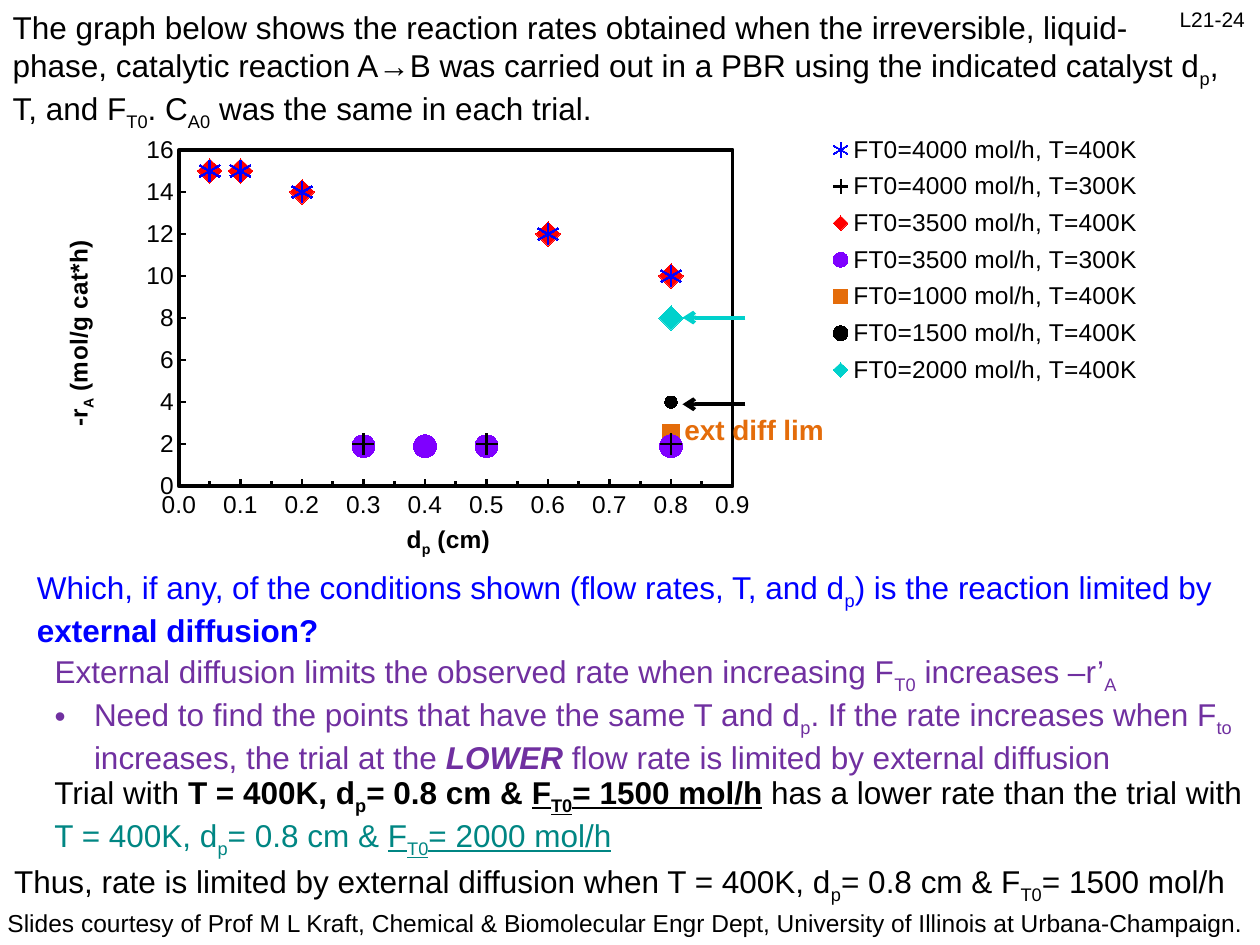
from lxml.etree import SubElement as Sub
from pptx import Presentation
from pptx.chart.data import XyChartData
from pptx.dml.color import RGBColor
from pptx.enum.chart import XL_CHART_TYPE as Kind, XL_LEGEND_POSITION as Side
from pptx.enum.chart import XL_MARKER_STYLE as Mark, XL_TICK_MARK as Tick
from pptx.enum.shapes import MSO_CONNECTOR as Link
from pptx.enum.text import MSO_ANCHOR as Anchor, MSO_AUTO_SIZE as Auto, PP_ALIGN as Align
from pptx.oxml.ns import qn
from pptx.util import Pt

FONT = "Arial"
BLACK = RGBColor(0x00, 0x00, 0x00)
BLUE = RGBColor(0x00, 0x00, 0xFF)
RED = RGBColor(0xFF, 0x00, 0x00)
VIOLET = RGBColor(0x7F, 0x00, 0xFF)
PURPLE = RGBColor(0x70, 0x30, 0xA0)
ORANGE = RGBColor(0xE4, 0x6C, 0x0A)
CYAN = RGBColor(0x00, 0xD1, 0xCC)
TEAL = RGBColor(0x00, 0x86, 0x83)

SIZES, HOT = (0.05, 0.1, 0.2, 0.6, 0.8), (15, 15, 14, 12, 10)
TRIALS = [
    (4000, 400, SIZES, HOT, Mark.STAR, 12, BLUE),
    (4000, 300, (0.3, 0.5, 0.8), (2, 2, 2), Mark.PLUS, 12, BLACK),
    (3500, 400, SIZES, HOT, Mark.DIAMOND, 14, RED),
    (3500, 300, (0.3, 0.4, 0.5, 0.8), (1.9,) * 4, Mark.CIRCLE, 13, VIOLET),
    (1000, 400, (0.8,), (2.5,), Mark.SQUARE, 10, ORANGE),
    (1500, 400, (0.8,), (4,), Mark.CIRCLE, 7, BLACK),
    (2000, 400, (0.8,), (8,), Mark.DIAMOND, 14, CYAN),
]


def write(frame, *lines, size=18, color=BLACK, bold=False, align=Align.LEFT, dots=()):
    """Fill a frame with lines of (text, flags[, color]) runs; flags are b, i, u and s for subscript."""
    for n, line in enumerate(lines):
        para = frame.add_paragraph() if n else frame.paragraphs[0]
        para.alignment, para.space_before = align, Pt(0)
        props = para._p.get_or_add_pPr()
        hang = Pt(22.5) if n in dots else 0
        props.set("marL", str(hang))
        props.set("indent", str(-hang))
        if hang:
            Sub(props, qn("a:buChar"), char="•")
        else:
            Sub(props, qn("a:buNone"))
        for text, flags, *tint in line:
            run = para.add_run()
            run.text = text
            font = run.font
            font.name, font.size = FONT, Pt(size)
            font.bold, font.italic = bold or "b" in flags, "i" in flags
            font.underline = "u" in flags
            font.color.rgb = tint[0] if tint else color
            if "s" in flags:
                run._r.get_or_add_rPr().set("baseline", "-25000")


def fit(shape, box):
    """Move a placeholder into a box and top-align its text."""
    shape.left, shape.top, shape.width, shape.height = map(Pt, box)
    frame = shape.text_frame
    frame.auto_size, frame.vertical_anchor, frame.word_wrap = Auto.NONE, Anchor.TOP, True
    return frame


def label(slide, box, *lines, wrap=True, pad=7.2, **style):
    """Add a text box."""
    frame = slide.shapes.add_textbox(*map(Pt, box)).text_frame
    frame.word_wrap = wrap
    frame.margin_left = frame.margin_right = Pt(pad)
    write(frame, *lines, **style)


def arrow(slide, x, y, color):
    """Draw a short arrow that points left from x, y."""
    line = slide.shapes.add_connector(Link.STRAIGHT, Pt(x), Pt(y), Pt(x - 36), Pt(y))
    line.line.color.rgb, line.line.width = color, Pt(2.25)
    props = line.element.find(qn("p:spPr"))
    Sub(props.find(qn("a:ln")), qn("a:tailEnd"), type="arrow")
    Sub(props, qn("a:effectLst"))


def place(node, inner=False, **spots):
    """Give a chart part a manual layout in fractions of the chart."""
    layout = node.find(qn("c:layout"))
    if layout is None:
        layout = Sub(node, qn("c:layout"))
        node.insert(1, layout)
    manual = Sub(layout, qn("c:manualLayout"))
    if inner:
        Sub(manual, qn("c:layoutTarget"), val="inner")
    for mode in ("xMode", "yMode"):
        Sub(manual, qn("c:" + mode), val="edge")
    for key, val in spots.items():
        Sub(manual, qn("c:" + key), val=str(val))


def scale(axis, top, step, form, *title):
    """Format one axis and its title."""
    axis.minimum_scale, axis.maximum_scale, axis.major_unit = 0, top, step
    axis.has_major_gridlines = False
    axis.major_tick_mark = Tick.INSIDE
    axis.tick_labels.number_format, axis.tick_labels.number_format_is_linked = form, False
    axis.format.line.color.rgb, axis.format.line.width = BLACK, Pt(1.5)
    write(axis.axis_title.text_frame, title, size=14, bold=True, align=Align.CENTER)


def frame_plot(area):
    """Outline the plot area."""
    props = Sub(area, qn("c:spPr"))
    Sub(props, qn("a:noFill"))
    edge = Sub(props, qn("a:ln"), w=str(Pt(2.25)))
    Sub(Sub(edge, qn("a:solidFill")), qn("a:srgbClr"), val=str(BLACK))


def graph(slide, box):
    """Add the rate chart with its arrows and tag."""
    data = XyChartData()
    for flow, temp, xs, ys, *_ in TRIALS:
        series = data.add_series(f"FT0={flow} mol/h, T={temp}K")
        for x, y in zip(xs, ys):
            series.add_data_point(x, y)
    chart = slide.shapes.add_chart(Kind.XY_SCATTER, *map(Pt, box), data).chart
    chart.has_title = False
    chart.font.name, chart.font.size, chart.font.color.rgb = FONT, Pt(14), BLACK
    chart.plots[0].vary_by_categories = False
    for series, (*_, style, size, color) in zip(chart.plots[0].series, TRIALS):
        series.smooth = False
        series.format.line.fill.background()
        mark = series.marker
        mark.style, mark.size = style, size
        mark.format.fill.solid()
        mark.format.fill.fore_color.rgb = mark.format.line.color.rgb = color
    across, up = chart.category_axis, chart.value_axis
    scale(across, 0.9, 0.1, "#,##0.0", ("d", ""), ("p", "s"), (" (cm)", ""))
    across.minor_unit, across.minor_tick_mark = 0.05, Tick.INSIDE
    scale(up, 16, 2, "General", ("-r", ""), ("A", "s"), (" (mol/g cat*h)", ""))
    chart.has_legend = True
    chart.legend.position, chart.legend.include_in_layout = Side.RIGHT, False
    root = chart.element
    area = root.find(".//" + qn("c:plotArea"))
    place(area, inner=True, x=0.113, y=0.063, w=0.475, h=0.77)
    frame_plot(area)
    place(root.find(".//" + qn("c:legend")), x=0.645, y=0.01, w=0.32, h=0.61)
    base, side = root.iter(qn("c:title"))
    place(base, x=0.305, y=0.91)
    place(side, x=0.01, y=0.265)
    turn = side.find(".//" + qn("a:bodyPr"))
    turn.set("rot", "-5400000")
    turn.set("vert", "horz")
    left, top = box[:2]
    arrow(slide, left + 399, top + 161, BLACK)
    arrow(slide, left + 399, top + 111.5, CYAN)
    label(slide, (left + 357, top + 162, 97, 27), [("ext diff lim", "")],
          wrap=False, size=16, color=ORANGE, bold=True)


def head(slide, box):
    """Write the problem in the title and the page label beside it."""
    left, top, width, _ = box
    write(fit(slide.shapes.title, box),
          [("The graph below shows the reaction rates obtained when the irreversible, liquid-", "")],
          [("phase, catalytic reaction A→B was carried out in a PBR using the indicated catalyst d", ""),
           ("p", "s"), (", T, and F", ""), ("T0", "s"), (". C", ""), ("A0", "s"),
           (" was the same in each trial.", "")])
    label(slide, (left + width - 53, top - 1, 53, 21), [("L21-24", "")], wrap=False, size=12)


def reason(slide, box):
    """Write the question, the rule and the answer."""
    left, top, width, _ = box
    label(slide, (left + 14, top, 691, 51),
          [("Which, if any, of the conditions shown (flow rates, T, and d", ""), ("p", "s"),
           (") is the reaction limited by ", ""), ("external diffusion?", "b")], color=BLUE)
    write(fit(slide.placeholders[1], (left + 24, top + 48, 691, 73)),
          [("External diffusion limits the observed rate when increasing F", ""), ("T0", "s"),
           (" increases –r’", ""), ("A", "s")],
          [("Need to find the points that have the same T and d", ""), ("p", "s"),
           (". If the rate increases when F", ""), ("to", "s"),
           (" increases, the trial at the ", ""), ("LOWER", "bi"),
           (" flow rate is limited by external diffusion", "")],
          color=PURPLE, dots=(1,))
    label(slide, (left + 24, top + 117, width - 24, 51),
          [("Trial with ", ""), ("T = 400K, d", "b"), ("p", "bs"), ("= 0.8 cm & ", "b"),
           ("F", "bu"), ("T0", "bus"), ("= 1500 mol/h", "bu"),
           (" has a lower rate than the trial with ", ""), ("T = 400K, d", "", TEAL),
           ("p", "s", TEAL), ("= 0.8 cm & ", "", TEAL), ("F", "u", TEAL),
           ("T0", "us", TEAL), ("= 2000 mol/h", "u", TEAL)])
    label(slide, (left + 1, top + 168, 716, 29),
          [("Thus, rate is limited by external diffusion when T = 400K, d", ""), ("p", "s"),
           ("= 0.8 cm & F", ""), ("T0", "s"), ("= 1500 mol/h", "")], wrap=False)


def foot(slide, box):
    """Write the credit line."""
    label(slide, box, [("Slides courtesy of Prof M L Kraft, Chemical & Biomolecular Engr Dept, "
                        "University of Illinois at Urbana-Champaign.", "")],
          wrap=False, pad=0, size=14, align=Align.CENTER)


def main():
    """Build and save the slide."""
    deck = Presentation()
    deck.slide_width, deck.slide_height = Pt(720), Pt(540)
    slide = deck.slides.add_slide(deck.slide_layouts[1])
    foot(slide, (0, 515.5, 715, 24))
    head(slide, (0, 1, 720, 73))
    graph(slide, (27, 70, 666, 252))
    reason(slide, (0, 321, 720, 197))
    deck.save("out.pptx")


if __name__ == "__main__":
    main()
